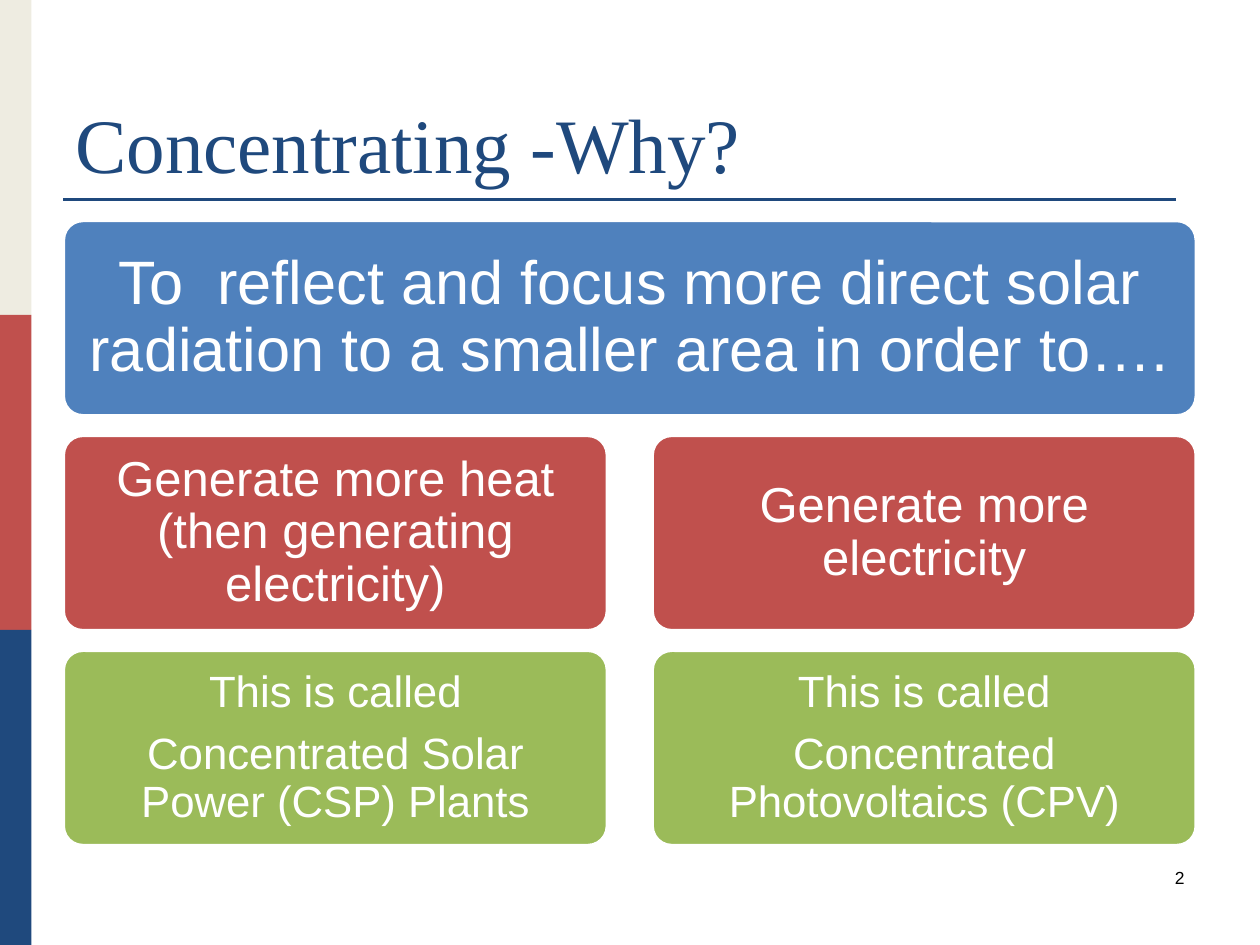
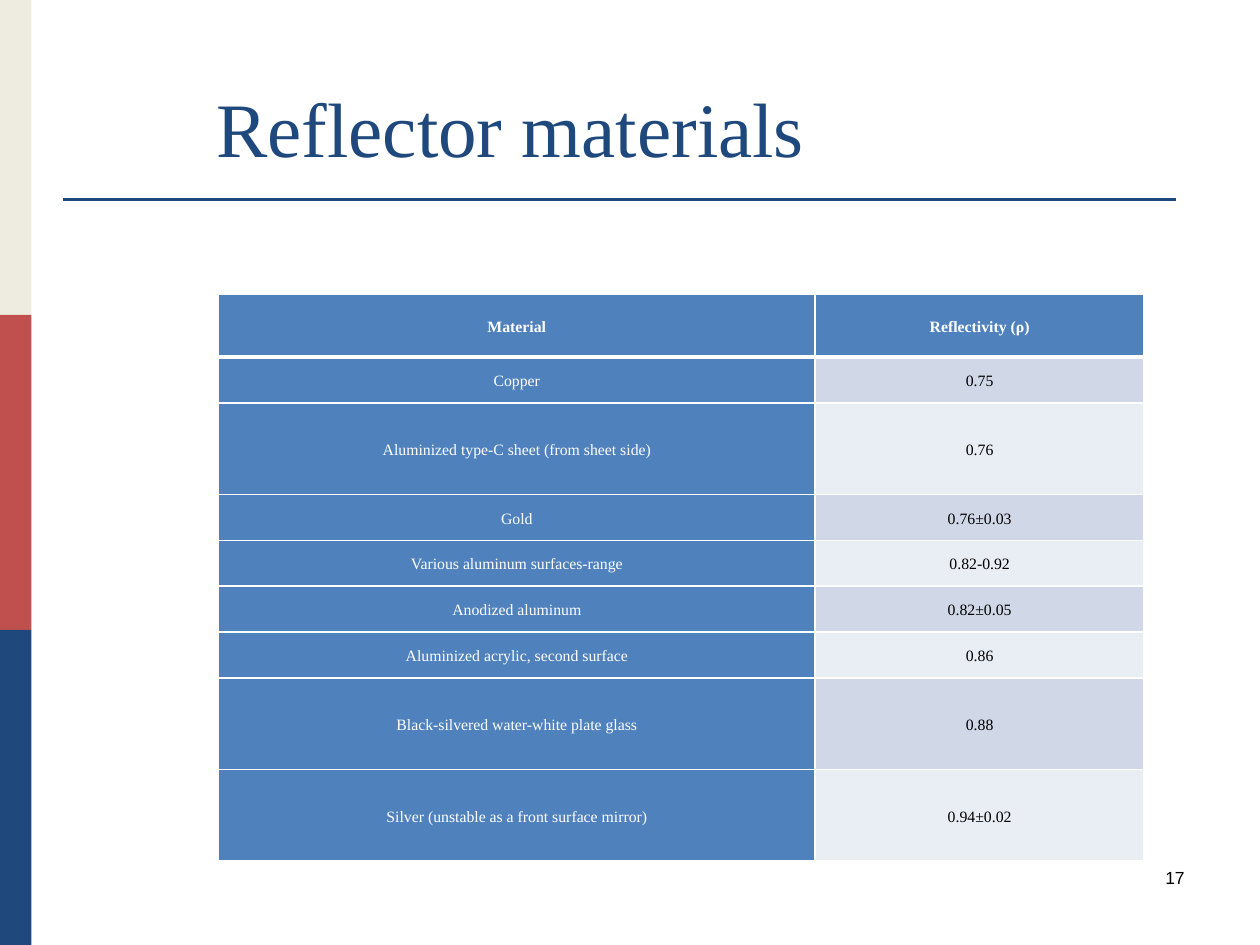
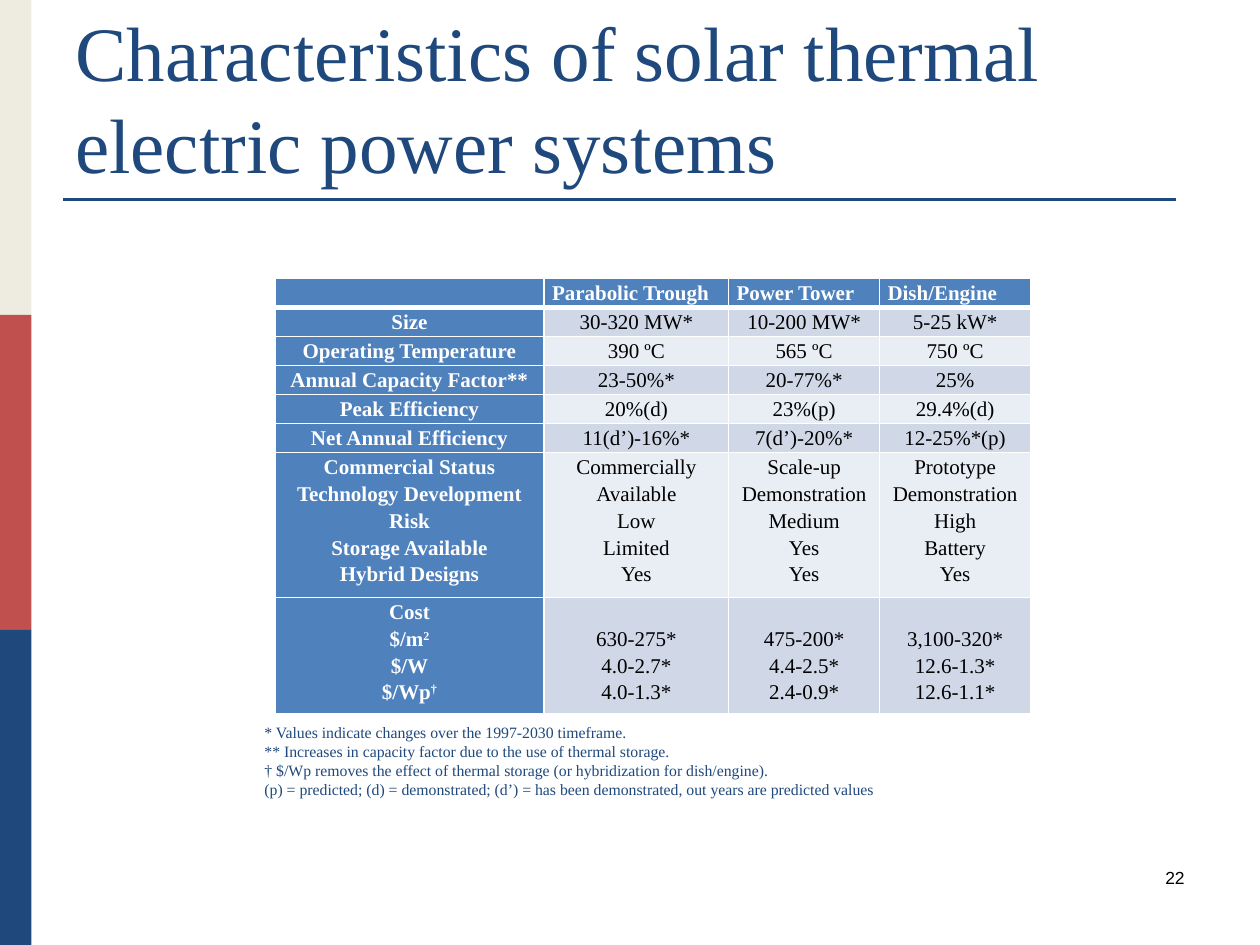
from lxml.etree import SubElement
from pptx import Presentation
from pptx.dml.color import RGBColor
from pptx.enum.shapes import MSO_CONNECTOR, MSO_SHAPE
from pptx.enum.text import MSO_ANCHOR, PP_ALIGN
from pptx.oxml import parse_xml
from pptx.oxml.ns import nsdecls, qn
from pptx.util import Pt

NAVY, RED, CREAM = "1F497D", "C0504D", "EEECE1"
BLUE, GREEN, WHITE, BLACK = "4F81BD", "9BBB59", "FFFFFF", "000000"
BANDS = ["D0D8E8", "E9EDF4"]
SERIF, SANS = "Times New Roman", "Arial"


def paint(target, color):
    """Give a shape, line, cell or font a solid fill."""
    target.fill.solid()
    target.fill.fore_color.rgb = RGBColor.from_string(color)


def write(frame, text, size, color, font=SERIF, bold=False, align=PP_ALIGN.LEFT,
          anchor=MSO_ANCHOR.TOP, spacing=1.0, after=0):
    """Fill a text frame, one paragraph a line; ^ switches superscript on and off."""
    frame.word_wrap = True
    frame.vertical_anchor = anchor
    for number, line in enumerate(text.split("\n")):
        paragraph = frame.add_paragraph() if number else frame.paragraphs[0]
        paragraph.alignment = align
        paragraph.line_spacing = spacing
        paragraph.space_after = Pt(after)
        if not line:
            SubElement(paragraph._p, qn("a:endParaRPr"), sz=str(size * 100))
            continue
        for part, words in enumerate(line.split("^")):
            run = paragraph.add_run()
            run.text = words
            run.font.name, run.font.size, run.font.bold = font, Pt(size), bold
            paint(run.font, color)
            if part % 2:
                run._r.get_or_add_rPr().set("baseline", "30000")


prs = Presentation()
prs.slide_width, prs.slide_height = Pt(720), Pt(540)

# Shared side bands, title, rule and page number
FULL_TITLE = (36, 21.6, 648, 90)
headings = [
    ("Concentrating -Why?", FULL_TITLE, "2"),
    ("Reflector materials", (116.6, 35.3, 486, 67), "17"),
    ("Characteristics of solar thermal electric power systems", FULL_TITLE, "22"),
]
slides = []
for heading, place, page in headings:
    slide = prs.slides.add_slide(prs.slide_layouts[6])
    slides.append(slide)
    for row, color in enumerate([CREAM, RED, NAVY]):
        band = slide.shapes.add_shape(MSO_SHAPE.RECTANGLE, 0, Pt(180 * row), Pt(18), Pt(180))
        band.shadow.inherit = False
        paint(band, color)
        band.line.fill.background()
    rule = slide.shapes.add_connector(MSO_CONNECTOR.STRAIGHT, Pt(36), Pt(114), Pt(672), Pt(114))
    rule.line.width = Pt(1.5)
    paint(rule.line, NAVY)
    SubElement(rule._element.spPr, qn("a:effectLst"))
    title = slide.shapes.add_textbox(*map(Pt, place))
    write(title.text_frame, heading, 44, NAVY, anchor=MSO_ANCHOR.BOTTOM)
    page_number = slide.shapes.add_textbox(Pt(516), Pt(492), Pt(168), Pt(36))
    write(page_number.text_frame, page, 10, BLACK, font=SANS, align=PP_ALIGN.RIGHT)

why_slide, materials_slide, systems_slide = slides

# Reasons for concentrating: one wide box over two columns
LEFT, TOP, FULL_WIDTH = 36.2, 126, 647.4
BOX_HEIGHT, COLUMN_GAP, ROW_GAP = 111.6, 25.6, 11.2
reasons = [
    (BLUE, 35, 10.8, ["To  reflect and focus more direct solar radiation to a smaller area in order to…."]),
    (RED, 28, 8.4, ["Generate more heat (then generating electricity)", "Generate more electricity"]),
    (GREEN, 25, 7.5, ["This is called\nConcentrated Solar Power (CSP) Plants",
                      "This is called\nConcentrated Photovoltaics (CPV)"]),
]
for row, (color, size, inset, texts) in enumerate(reasons):
    width = (FULL_WIDTH - COLUMN_GAP * (len(texts) - 1)) / len(texts)
    for column, text in enumerate(texts):
        box = why_slide.shapes.add_shape(
            MSO_SHAPE.ROUNDED_RECTANGLE, Pt(LEFT + column * (width + COLUMN_GAP)),
            Pt(TOP + row * (BOX_HEIGHT + ROW_GAP)), Pt(width), Pt(BOX_HEIGHT))
        box.adjustments[0] = 0.1
        box.shadow.inherit = False
        paint(box, color)
        paint(box.line, WHITE)
        box.line.width = Pt(2)
        frame = box.text_frame
        frame.margin_left = frame.margin_right = Pt(inset)
        frame.margin_top = frame.margin_bottom = Pt(inset)
        write(frame, text, size, WHITE, font=SANS, align=PP_ALIGN.CENTER,
              anchor=MSO_ANCHOR.MIDDLE, spacing=0.9, after=size * 0.35)

# Tables
materials = [
    ["Material", "Reflectivity (ρ)"],
    ["Copper", "0.75"],
    ["Aluminized type-C sheet (from sheet side)", "0.76"],
    ["Gold", "0.76±0.03"],
    ["Various aluminum surfaces-range", "0.82-0.92"],
    ["Anodized aluminum", "0.82±0.05"],
    ["Aluminized acrylic, second surface", "0.86"],
    ["Black-silvered water-white plate glass", "0.88"],
    ["Silver (unstable as a front surface mirror)", "0.94±0.02"],
]
systems = [
    ["", "Parabolic Trough", "Power Tower", "Dish/Engine"],
    ["Size", "30-320 MW*", "10-200 MW*", "5-25 kW*"],
    ["Operating Temperature", "390 ºC", "565 ºC", "750 ºC"],
    ["Annual Capacity Factor**", "23-50%*", "20-77%*", "25%"],
    ["Peak Efficiency", "20%(d)", "23%(p)", "29.4%(d)"],
    ["Net Annual Efficiency", "11(d’)-16%*", "7(d’)-20%*", "12-25%*(p)"],
    ["Commercial Status\nTechnology Development Risk\nStorage Available\nHybrid Designs",
     "Commercially\nAvailable\nLow\nLimited\nYes",
     "Scale-up\nDemonstration\nMedium\nYes\nYes",
     "Prototype\nDemonstration\nHigh\nBattery\nYes"],
    ["Cost\n$/m^2^\n$/W\n$/Wp^†^", "630-275*\n4.0-2.7*\n4.0-1.3*",
     "475-200*\n4.4-2.5*\n2.4-0.9*", "3,100-320*\n12.6-1.3*\n12.6-1.1*"],
]
SHORT, TALL = 26.2, 52.4
tables = [
    (materials_slide, materials, (124.8, 168), [341, 188],
     [36, SHORT, TALL, SHORT, SHORT, SHORT, SHORT, TALL, TALL],
     9, False, PP_ALIGN.CENTER, MSO_ANCHOR.MIDDLE),
    (systems_slide, systems, (157, 159.1), [154, 105.4, 86.3, 86.3],
     [16.56] * 6 + [82.8, 66.24],
     12, True, PP_ALIGN.LEFT, MSO_ANCHOR.TOP),
]
for slide, rows, (left, top), widths, heights, size, bold_labels, header_align, anchor in tables:
    table = slide.shapes.add_table(
        len(rows), len(widths), Pt(left), Pt(top), Pt(sum(widths)), Pt(sum(heights))).table
    for column, width in enumerate(widths):
        table.columns[column].width = Pt(width)
    for row, height in enumerate(heights):
        table.rows[row].height = Pt(height)
        for column, text in enumerate(rows[row]):
            cell = table.cell(row, column)
            is_header, is_label = row == 0, column == 0
            cell.margin_left = cell.margin_right = Pt(4.5)
            cell.margin_top = cell.margin_bottom = 0
            cell.vertical_anchor = anchor
            write(cell.text_frame, text, size, WHITE if is_header or is_label else BLACK,
                  bold=is_header or (is_label and bold_labels),
                  align=header_align if is_header else PP_ALIGN.CENTER,
                  anchor=None, spacing=1.15)
            paint(cell, BLUE if is_header or is_label else BANDS[(row - 1) % 2])
            for position, side in enumerate(["lnL", "lnR", "lnT", "lnB"]):
                under_header = (row, side) in [(0, "lnB"), (1, "lnT")]
                border = parse_xml(
                    f'<a:{side} {nsdecls("a")} w="{Pt(3 if under_header else 1)}"><a:solidFill>'
                    f'<a:srgbClr val="{WHITE}"/></a:solidFill></a:{side}>')
                cell._tc.get_or_add_tcPr().insert(position, border)

# Cost values start one line lower, level with their units
for column in range(1, 4):
    table.cell(len(systems) - 1, column).margin_top = Pt(15.3)

footnotes = systems_slide.shapes.add_textbox(Pt(144), Pt(409.7), Pt(430.6), Pt(51))
write(footnotes.text_frame,
      "* Values indicate changes over the 1997-2030 timeframe.\n"
      "** Increases in capacity factor due to the use of thermal storage.\n"
      "† $/Wp removes the effect of thermal storage (or hybridization for dish/engine).\n"
      "(p) = predicted; (d) = demonstrated; (d’) = has been demonstrated, "
      "out years are predicted values", 9, NAVY)

prs.save("out.pptx")
